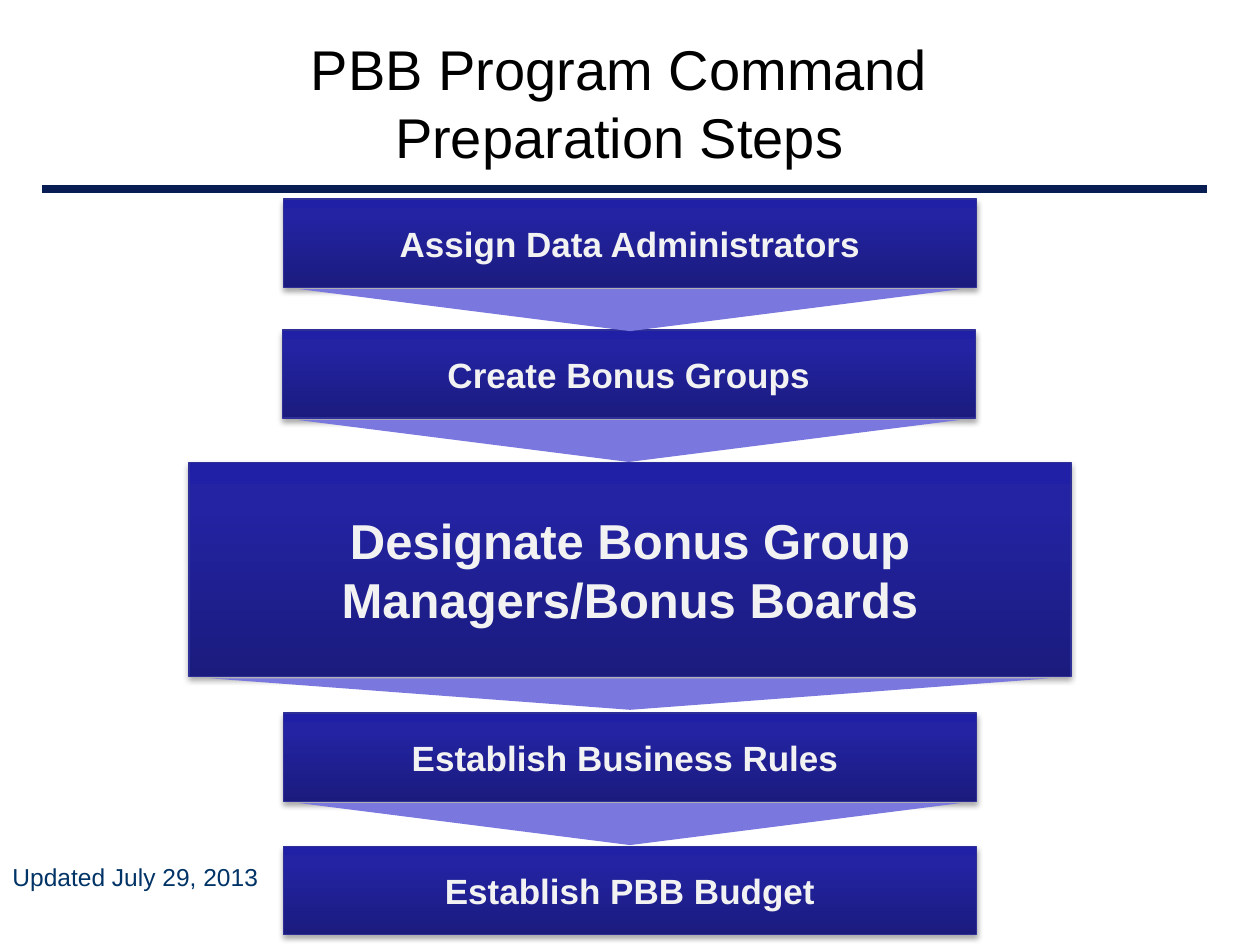
from dataclasses import dataclass

from lxml.etree import SubElement
from pptx import Presentation
from pptx.dml.color import RGBColor
from pptx.enum.shapes import MSO_CONNECTOR, MSO_SHAPE
from pptx.enum.text import MSO_ANCHOR, PP_ALIGN
from pptx.oxml.ns import qn
from pptx.shapes.autoshape import Shape
from pptx.slide import Slide
from pptx.util import Pt


@dataclass(frozen=True)
class Theme:
    font: str = "Arial"
    title: str = "000000"
    rule: str = "081D54"
    step_text: str = "F2F2F2"
    step_line: str = "2F2F98"
    step_gradient: tuple = ((0, "1B1B7E"), (80, "2323A3"), (100, "2020A6"))
    pointer: str = "7A78DF"
    date: str = "003366"
    shadow: str = "000000"
    title_size: float = 32
    step_size: float = 20
    focus_size: float = 28
    date_size: float = 14


THEME = Theme()


@dataclass(frozen=True)
class Step:
    text: str
    top: float
    left: float = 162
    width: float = 396
    height: float = 50.4
    size: float = THEME.step_size
    pointer_inset: float = 9
    pointer_height: float = 24


STEPS = [
    Step("Assign Data Administrators", 113.8),
    Step("Create Bonus Groups", 188.6, left=161.3),
    Step("Designate Bonus Group Managers/Bonus Boards", 264.2, left=108, width=504,
         height=122.4, size=THEME.focus_size, pointer_inset=12, pointer_height=18),
    Step("Establish Business Rules ", 407.5),
    Step("Establish PBB Budget", 483.8),
]


def write_text(shape: Shape, text: str, *, size: float, color: str, bold: bool = False,
               align: PP_ALIGN = PP_ALIGN.CENTER,
               anchor: MSO_ANCHOR = MSO_ANCHOR.MIDDLE) -> None:
    frame = shape.text_frame
    frame.word_wrap = True
    frame.vertical_anchor = anchor
    paragraph = frame.paragraphs[0]
    paragraph.alignment = align
    run = paragraph.add_run()
    run.text = text
    run.font.name = THEME.font
    run.font.size = Pt(size)
    run.font.bold = bold
    run.font.color.rgb = RGBColor.from_string(color)


def fill_gradient(shape: Shape, stops: tuple) -> None:
    """Fill from bottom to top with any number of (percent, colour) stops."""
    shape.fill.gradient()
    shape.fill.gradient_angle = 90
    stop_list = shape.element.spPr.find(qn("a:gradFill")).find(qn("a:gsLst"))
    for old_stop in list(stop_list):
        stop_list.remove(old_stop)
    for percent, color in stops:
        stop = SubElement(stop_list, qn("a:gs"), pos=str(percent * 1000))
        SubElement(stop, qn("a:srgbClr"), val=color)


def add_shadow(shape: Shape) -> None:
    shape.shadow.inherit = False
    effects = shape.element.spPr.find(qn("a:effectLst"))
    shadow = SubElement(effects, qn("a:outerShdw"), blurRad=str(Pt(3.1)),
                        dist=str(Pt(1.8)), dir="5400000", rotWithShape="0")
    color = SubElement(shadow, qn("a:srgbClr"), val=THEME.shadow)
    SubElement(color, qn("a:alpha"), val="35000")


def add_step(slide: Slide, step: Step) -> None:
    shape = slide.shapes.add_shape(MSO_SHAPE.RECTANGLE, Pt(step.left), Pt(step.top),
                                   Pt(step.width), Pt(step.height))
    fill_gradient(shape, THEME.step_gradient)
    shape.line.color.rgb = RGBColor.from_string(THEME.step_line)
    shape.line.width = Pt(0.75)
    add_shadow(shape)
    write_text(shape, step.text, size=step.size, color=THEME.step_text, bold=True)


def add_pointer(slide: Slide, step: Step) -> None:
    """Draw the downward triangle that leads from a step to the next one."""
    shape = slide.shapes.add_shape(
        MSO_SHAPE.ISOSCELES_TRIANGLE, Pt(step.left + step.pointer_inset),
        Pt(step.top + step.height + 1), Pt(step.width - 2 * step.pointer_inset),
        Pt(step.pointer_height))
    shape.rotation = 180
    shape.shadow.inherit = False
    shape.fill.solid()
    shape.fill.fore_color.rgb = RGBColor.from_string(THEME.pointer)
    shape.line.fill.background()


def add_rule(slide: Slide) -> None:
    rule = slide.shapes.add_connector(MSO_CONNECTOR.STRAIGHT, Pt(24), Pt(108), Pt(690), Pt(108))
    rule.line.color.rgb = RGBColor.from_string(THEME.rule)
    rule.line.width = Pt(4.5)
    SubElement(rule.element.spPr, qn("a:effectLst"))


def main() -> None:
    presentation = Presentation()
    presentation.slide_width, presentation.slide_height = Pt(720), Pt(540)
    slide = presentation.slides.add_slide(presentation.slide_layouts[6])

    add_rule(slide)
    title = slide.shapes.add_textbox(Pt(138), Pt(14.4), Pt(432), Pt(88))
    write_text(title, "PBB Program Command Preparation Steps",
               size=THEME.title_size, color=THEME.title)
    for step in STEPS:
        add_step(slide, step)
    for step in STEPS[:-1]:
        add_pointer(slide, step)
    date = slide.shapes.add_textbox(Pt(0), Pt(489), Pt(168), Pt(37.5))
    write_text(date, "Updated July 29, 2013", size=THEME.date_size, color=THEME.date,
               align=PP_ALIGN.LEFT, anchor=MSO_ANCHOR.TOP)

    presentation.save("out.pptx")


if __name__ == "__main__":
    main()
